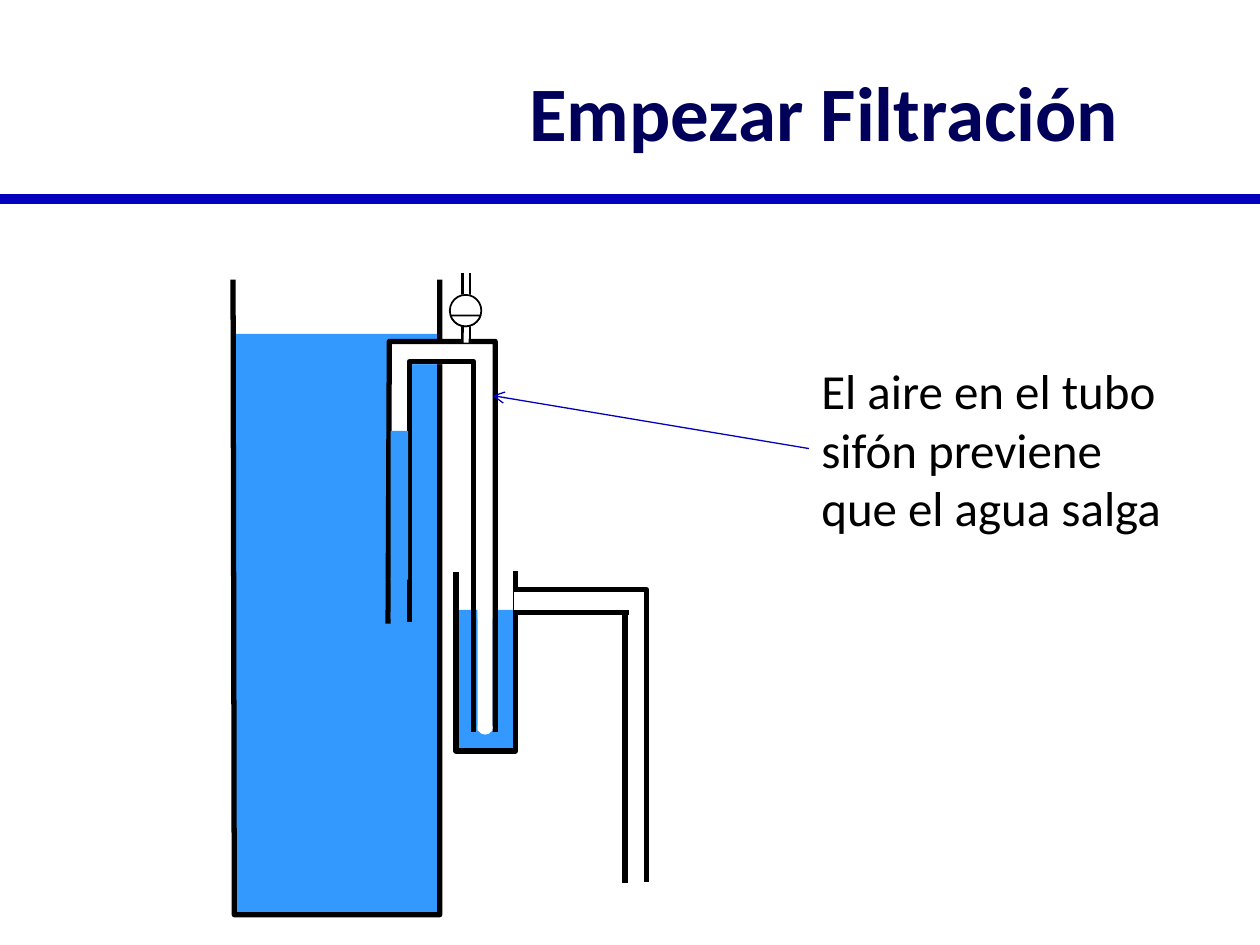
from pptx import Presentation
from pptx.dml.color import RGBColor
from pptx.enum.shapes import MSO_CONNECTOR, MSO_SHAPE as SHAPE
from pptx.enum.text import MSO_ANCHOR as ANCHOR, PP_ALIGN as ALIGN
from pptx.oxml.ns import qn
from pptx.util import Pt
from lxml import etree

PX = 9144  # EMU per px, 100 px to the inch
WATER, WHITE, BLACK = "3399FF", "FFFFFF", "000000"
RULE, ARROW, TITLE = "0300BE", "0300BA", "00005A"


def rgb(color):
    return RGBColor.from_string(color)


class Sketch:
    font = "Calibri"
    wall = 3

    def __init__(self, slide):
        self.shapes = slide.shapes

    def stroke(self, s, color, width):
        s.line.color.rgb = rgb(color)
        s.line.width = Pt(width)

    def shape(self, kind, x, y, w, h, fill, line=None, angles=None):
        """Add a preset shape; angles are the chord ends in degrees."""
        s = self.shapes.add_shape(kind, x * PX, y * PX, w * PX, h * PX)
        s.shadow.inherit = False
        s.fill.solid()
        s.fill.fore_color.rgb = rgb(fill)
        if line:
            self.stroke(s, line, 1)
        else:
            s.line.fill.background()
        for i, angle in enumerate(angles or ()):
            s.adjustments[i] = angle * 0.6
        return s

    def rect(self, x, y, w, h, fill):
        return self.shape(SHAPE.RECTANGLE, x, y, w, h, fill)

    def outline(self, start, *points):
        """Draw an open, unfilled wall through the points."""
        builder = self.shapes.build_freeform(*start, scale=PX)
        builder.add_line_segments(points, close=False)
        s = builder.convert_to_shape()
        s.shadow.inherit = False
        s.fill.background()
        self.stroke(s, BLACK, self.wall)

    def line(self, x1, y1, x2, y2, color=BLACK, width=wall, arrow=False):
        c = self.shapes.add_connector(
            MSO_CONNECTOR.STRAIGHT, x1 * PX, y1 * PX, x2 * PX, y2 * PX)
        self.stroke(c, color, width)
        if arrow:
            ln = c.line._get_or_add_ln()
            etree.SubElement(ln, qn("a:tailEnd"), type="arrow")
        etree.SubElement(c._element.spPr, qn("a:effectLst"))

    def text(self, x, y, w, h, text, size, color,
             bold=False, align=ALIGN.LEFT, anchor=ANCHOR.TOP):
        s = self.shapes.add_textbox(x * PX, y * PX, w * PX, h * PX)
        tf = s.text_frame
        tf.word_wrap = True
        tf.vertical_anchor = anchor
        p = tf.paragraphs[0]
        p.alignment = align
        r = p.add_run()
        r.text = text
        r.font.name, r.font.size, r.font.bold = self.font, Pt(size), bold
        r.font.color.rgb = rgb(color)


def draw_tanks(sk):
    sk.rect(186, 265, 163, 199, WATER)
    sk.rect(362, 484, 47, 112, WATER)
    sk.rect(187, 462, 163, 262, WATER)
    sk.outline((185, 222), (186, 726), (349, 726), (349, 222))
    sk.outline((362, 454), (362, 596), (409, 596), (409, 453))


def draw_outlet(sk):
    sk.outline((513, 700), (513, 468), (496, 468), (496, 701))
    sk.rect(408, 468, 91, 17, WHITE)
    for y in (486, 468):
        sk.line(499, y, 408, y)


def draw_siphon(sk):
    sk.rect(311, 273, 80, 16, WHITE)
    for x in (310, 379):
        sk.rect(x, 272, 14, 219, WHITE)
    sk.rect(295, 462, 36, 32, WATER)
    sk.rect(379, 482, 12, 98, WHITE)
    sk.outline((308, 495), (309, 271), (393, 271), (393, 581))
    sk.outline((325, 494), (325, 287), (376, 287), (376, 581))


def draw_valve(sk):
    for x in (367, 373):
        sk.line(x, 271, x, 217, width=1.5)
    box = (357, 234, 25, 25)
    sk.shape(SHAPE.OVAL, *box, WHITE, WHITE)
    for angles in ((-162, -18), (18, 162)):
        sk.shape(SHAPE.CHORD, *box, WHITE, BLACK, angles)
    sk.rect(368, 264, 4, 8, WHITE)


def draw_siphon_ends(sk):
    sk.rect(310, 459, 13, 32, WATER)
    sk.rect(310, 342, 14, 118, WATER)
    sk.shape(SHAPE.OVAL, 379, 572, 12, 11, WHITE)


def main():
    prs = Presentation()
    prs.slide_width, prs.slide_height = 1000 * PX, 750 * PX
    sk = Sketch(prs.slides.add_slide(prs.slide_layouts[6]))
    sk.line(0, 158, 1000, 158, RULE, 6)
    sk.text(333, 25, 642, 125, "Empezar Filtración", 44, TITLE,
            bold=True, align=ALIGN.CENTER, anchor=ANCHOR.MIDDLE)
    draw_tanks(sk)
    draw_outlet(sk)
    draw_siphon(sk)
    draw_valve(sk)
    draw_siphon_ends(sk)
    sk.text(642, 281, 308, 151,
            "El aire en el tubo sifón previene que el agua salga", 28, BLACK)
    sk.line(642, 356, 391, 314, ARROW, 0.75, arrow=True)
    prs.save("out.pptx")


if __name__ == "__main__":
    main()
